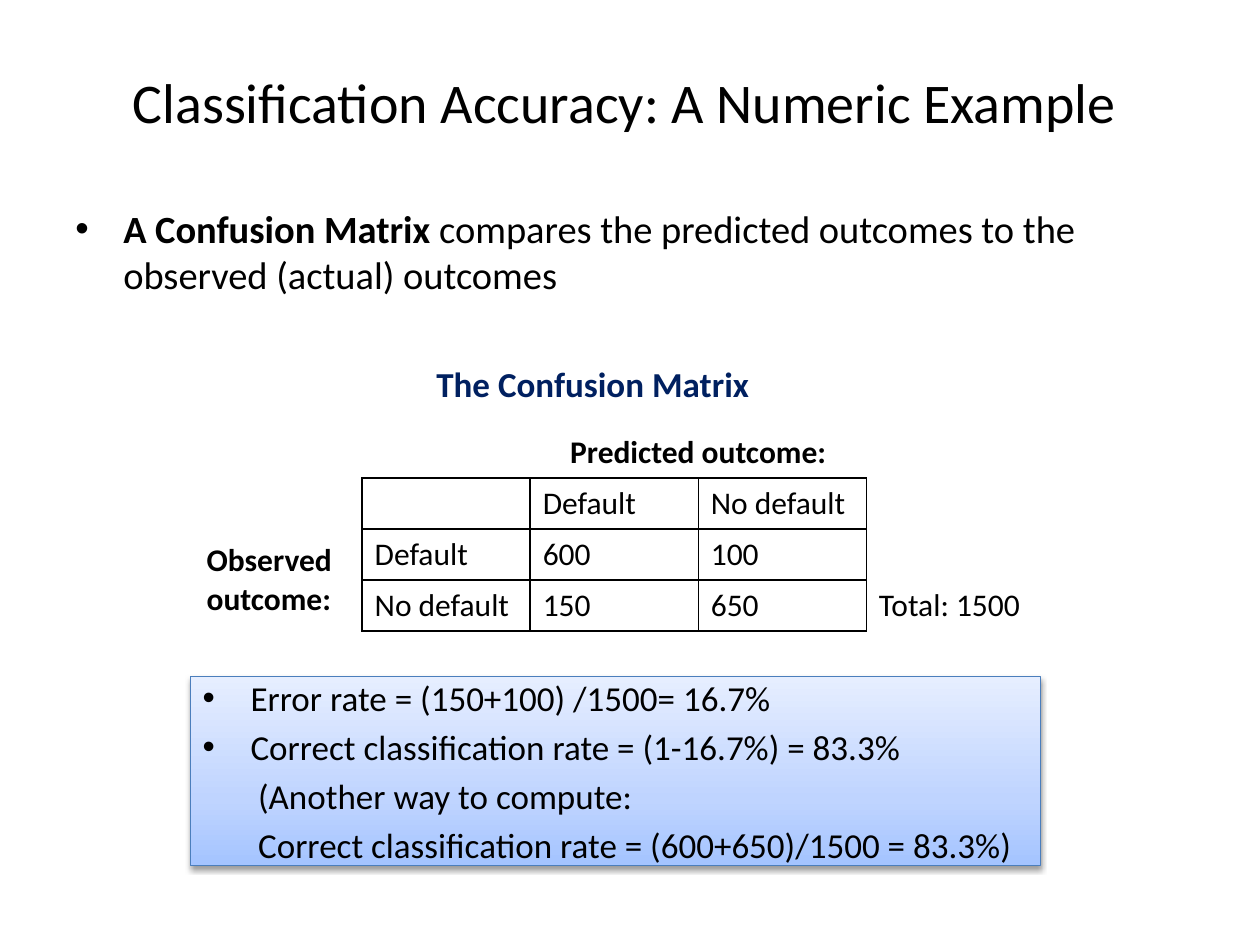
from lxml import etree
from pptx import Presentation
from pptx.dml.color import RGBColor
from pptx.enum.shapes import MSO_SHAPE
from pptx.enum.text import MSO_ANCHOR, PP_ALIGN
from pptx.oxml import parse_xml
from pptx.oxml.ns import nsdecls, qn
from pptx.util import Inches, Pt

LEFT, CENTER = PP_ALIGN.LEFT, PP_ALIGN.CENTER
TOP, MIDDLE = MSO_ANCHOR.TOP, MSO_ANCHOR.MIDDLE
RECTANGLE = MSO_SHAPE.RECTANGLE
FONT = "Calibri"
COLORS = {
    "text": "000000",
    "heading": "002060",
    "border": "000000",
    "outline": "4B7EBC",
    "shadow": "000000",
    "deep": "A4C4FF",
    "mid": "BFD4FF",
    "pale": "E6EEFF",
}
MATRIX = [
    ["", "", "Predicted outcome:", "", ""],
    ["", "", "Default", "No default", ""],
    ["Observed outcome:", "Default", "600", "100", ""],
    ["", "No default", "150", "650", "Total: 1500"],
]
RATES = [
    ("Error rate = (150+100) /1500= 16.7%", True),
    ("Correct classification rate = (1-16.7%) = 83.3%", True),
    ("(Another way to compute:", False),
    ("Correct classification rate = (600+650)/1500 = 83.3%)", False),
]


def color(name):
    return RGBColor.from_string(COLORS[name])


def set_font(para, size, bold=False, name="text"):
    para.font.name = FONT
    para.font.size = Pt(size)
    para.font.bold = bold
    para.font.color.rgb = color(name)


def set_indent(para, left, first=0.0, bullet=False):
    props = para._p.get_or_add_pPr()
    props.set("marL", str(Inches(left)))
    props.set("indent", str(Inches(first)))
    if bullet:
        etree.SubElement(props, qn("a:buFont")).set("typeface", "Arial")
        etree.SubElement(props, qn("a:buChar")).set("char", "•")


def add_text(page, left, top, width, height, text, size, bold=False,
             name="text", align=LEFT, anchor=TOP, wrap=True):
    box = page.shapes.add_textbox(
        Inches(left), Inches(top), Inches(width), Inches(height))
    box.text_frame.word_wrap = wrap
    box.text_frame.vertical_anchor = anchor
    para = box.text_frame.paragraphs[0]
    para.text = text
    para.alignment = align
    set_font(para, size, bold, name)
    return para


def in_grid(row, col):
    return 1 <= row <= 3 and 1 <= col <= 3


def set_borders(cell, row, col):
    props = cell._tc.get_or_add_tcPr()
    neighbours = {"lnL": (row, col - 1), "lnR": (row, col + 1),
                  "lnT": (row - 1, col), "lnB": (row + 1, col)}
    for side, neighbour in neighbours.items():
        line = etree.SubElement(props, qn(f"a:{side}"), w=str(Pt(1)))
        if in_grid(row, col) or in_grid(*neighbour):
            fill = etree.SubElement(line, qn("a:solidFill"))
            etree.SubElement(fill, qn("a:srgbClr"), val=COLORS["border"])
        else:
            etree.SubElement(line, qn("a:noFill"))


def add_matrix(page):
    rows, cols = len(MATRIX), len(MATRIX[0])
    table = page.shapes.add_table(
        rows, cols, Inches(1.54), Inches(3.39),
        Inches(6.67), Inches(1.62)).table
    table.first_row = table.horz_banding = False
    for row, texts in enumerate(MATRIX):
        for col, text in enumerate(texts):
            cell = table.cell(row, col)
            set_borders(cell, row, col)
            cell.fill.background()
            cell.text = text
            para = cell.text_frame.paragraphs[0]
            set_font(para, 18, bold=text.endswith("outcome:"))
    predicted, observed = table.cell(0, 2), table.cell(2, 0)
    predicted.merge(table.cell(0, 3))
    predicted.text_frame.paragraphs[0].alignment = CENTER
    observed.merge(table.cell(3, 0))
    observed.vertical_anchor = MIDDLE


def set_gradient(shape, stops, angle):
    shape.fill.gradient()
    shape.fill.gradient_angle = angle
    stop_list = shape._element.spPr.find(qn("a:gradFill")).find(qn("a:gsLst"))
    for stop in list(stop_list):
        stop_list.remove(stop)
    for position, name in stops:
        stop = etree.SubElement(stop_list, qn("a:gs"), pos=str(position * 1000))
        etree.SubElement(stop, qn("a:srgbClr"), val=COLORS[name])


def set_shadow(shape):
    shape.shadow.inherit = False
    effects = shape._element.spPr.find(qn("a:effectLst"))
    effects.append(parse_xml(
        f'<a:outerShdw {nsdecls("a")} blurRad="{Pt(3.1)}" dist="{Pt(1.6)}" '
        f'dir="5400000" rotWithShape="0"><a:srgbClr val="{COLORS["shadow"]}">'
        '<a:alpha val="38000"/></a:srgbClr></a:outerShdw>'))


def add_rates(page):
    panel = page.shapes.add_shape(
        RECTANGLE, Inches(1.51), Inches(5.37), Inches(6.75), Inches(1.5))
    set_gradient(panel, [(0, "deep"), (35, "mid"), (100, "pale")], 90)
    panel.line.color.rgb = color("outline")
    panel.line.width = Pt(0.75)
    set_shadow(panel)
    frame = panel.text_frame
    frame.word_wrap = True
    frame.vertical_anchor = MIDDLE
    for index, (text, bullet) in enumerate(RATES):
        para = frame.add_paragraph() if index else frame.paragraphs[0]
        para.text = text
        para.alignment = LEFT
        if index:
            para.space_before = Pt(4)
        if bullet:
            set_indent(para, 0.38, -0.38, bullet=True)
        else:
            set_indent(para, 0.44)
        set_font(para, 20)


def add_definition(page):
    para = add_text(page, 0.5, 1.58, 9.25, 2.54, "", 22)
    set_indent(para, 0.38, -0.38, bullet=True)
    for text, bold in [
        ("A Confusion Matrix ", True),
        ("compares the predicted outcomes to the observed (actual) outcomes",
         False),
    ]:
        span = para.add_run()
        span.text = text
        span.font.bold = bold


def main():
    deck = Presentation()
    deck.slide_width, deck.slide_height = Inches(10), Inches(7.5)
    page = deck.slides.add_slide(deck.slide_layouts[6])
    add_text(page, 0, 0.52, 9.92, 0.57,
             "Classification Accuracy: A Numeric Example", 32,
             align=CENTER, anchor=MIDDLE)
    add_matrix(page)
    add_rates(page)
    heading = add_text(page, 3.25, 2.83, 2.85, 0.44, "The Confusion Matrix",
                       20, True, "heading", CENTER, wrap=False)
    set_indent(heading, 0.06)
    add_definition(page)
    deck.save("out.pptx")


if __name__ == "__main__":
    main()
